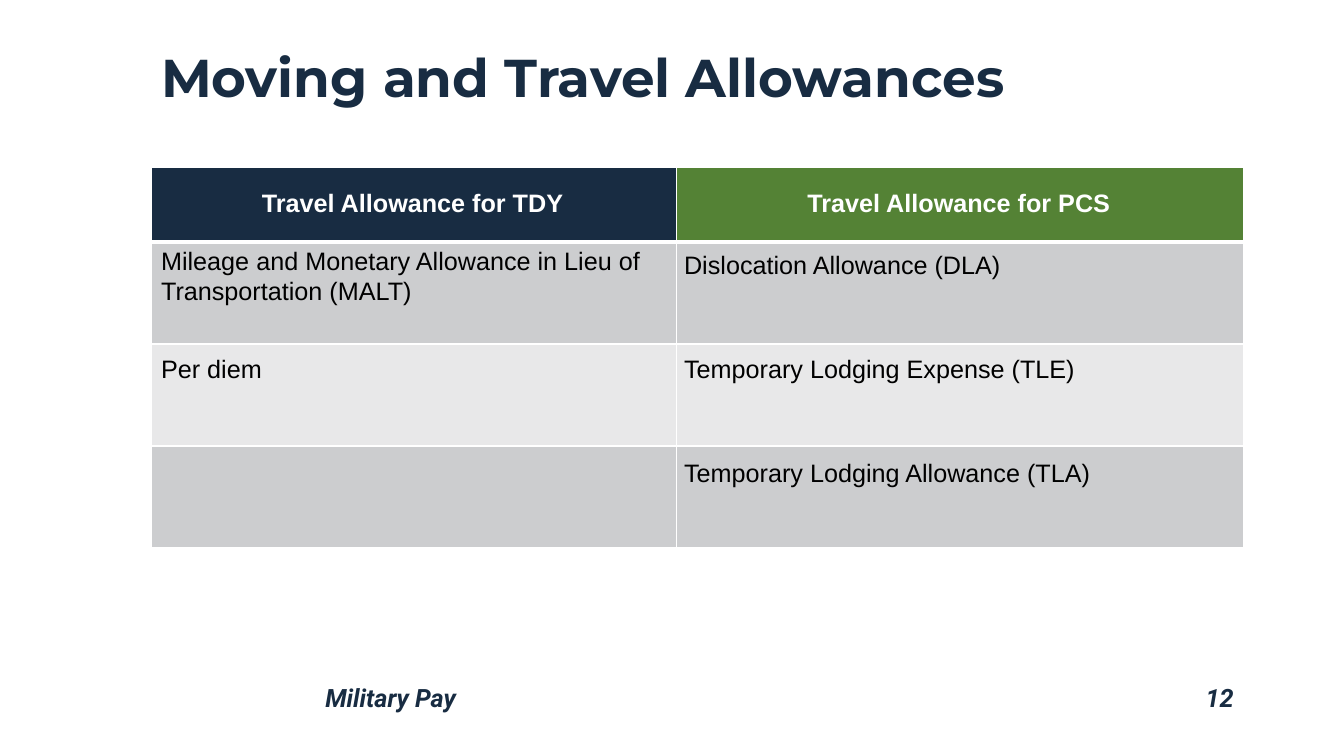
"""Build the slide on moving and travel allowances."""
from dataclasses import dataclass

from lxml import etree
from pptx import Presentation
from pptx.dml.color import RGBColor
from pptx.enum.text import MSO_ANCHOR as Anchor, PP_ALIGN as Align
from pptx.oxml.ns import qn
from pptx.util import Cm, Pt

NAVY, GREEN, WHITE, BLACK = "182C42", "548235", "FFFFFF", "000000"
DARK_GREY, LIGHT_GREY = "CCCDCF", "E8E8E9"
LEFT, TDY_W, PCS_X, PCS_W = 3.81, 13.18, 16.99, 14.35
COLUMN_WIDTHS = (13.23, 14.3)
ROW_HEIGHTS = (1.88, 2.57, 2.57, 2.57)
ROW_FILLS = ((NAVY, GREEN), (DARK_GREY,) * 2, (LIGHT_GREY,) * 2, (DARK_GREY,) * 2)


@dataclass
class Label:
    text: str
    x: float
    y: float
    w: float
    h: float
    color: str = BLACK
    font: str = "Arial"
    size: float = 18
    bold: bool = False
    italic: bool = False
    align: Align = Align.LEFT
    anchor: Anchor = Anchor.TOP
    spacing: float = 1.0


LABELS = (
    Label("12", 27.33, 17.15, 4.01, 0.97, NAVY, "Roboto", bold=True, italic=True,
          align=Align.RIGHT, spacing=0.9),
    Label("Moving and Travel Allowances", LEFT, 0.28, 27.53, 2.59, NAVY, "Montserrat",
          38, bold=True, anchor=Anchor.BOTTOM, spacing=0.9),
    Label("Military Pay", 7.95, 17.15, 19.38, 0.97, NAVY, "Roboto", bold=True,
          italic=True, spacing=0.9),
    Label("Travel Allowance for TDY", LEFT, 4.67, TDY_W, 0.99, WHITE, bold=True,
          align=Align.CENTER, spacing=0.9),
    Label("Mileage and Monetary Allowance in Lieu of Transportation (MALT)",
          LEFT, 6.05, TDY_W, 2.82),
    Label("Per diem", LEFT, 8.79, TDY_W, 2.82),
    Label("Travel Allowance for PCS", PCS_X, 4.6, PCS_W, 0.99, WHITE, bold=True,
          align=Align.CENTER),
    Label("Dislocation Allowance (DLA)", PCS_X, 6.17, PCS_W, 2.41),
    Label("Temporary Lodging Expense (TLE)", PCS_X, 8.79, PCS_W, 1.8),
    Label("Temporary Lodging Allowance (TLA)", PCS_X, 11.4, PCS_W, 1.14),
)


def rgb(color: str) -> RGBColor:
    """Turn a hex string into a colour."""
    return RGBColor.from_string(color)


def add_border(cell, side: str, width: float) -> None:
    """Draw one white edge of a table cell."""
    ln = etree.SubElement(cell._tc.get_or_add_tcPr(), qn(f"a:ln{side}"), w=str(Pt(width)))
    fill = etree.SubElement(ln, qn("a:solidFill"))
    etree.SubElement(fill, qn("a:srgbClr"), val=WHITE)


def add_grid(s) -> None:
    """Add the table with its fills and borders."""
    table = s.shapes.add_table(
        len(ROW_HEIGHTS), len(COLUMN_WIDTHS), Cm(LEFT), Cm(4.22),
        Cm(sum(COLUMN_WIDTHS)), Cm(sum(ROW_HEIGHTS))).table
    for column, width in zip(table.columns, COLUMN_WIDTHS):
        column.width = Cm(width)
    for i, (row, height, fills) in enumerate(zip(table.rows, ROW_HEIGHTS, ROW_FILLS)):
        row.height = Cm(height)
        for cell, color in zip(row.cells, fills):
            for side in "LRTB":
                below_header = (i, side) in ((0, "B"), (1, "T"))
                add_border(cell, side, 3 if below_header else 1)
            cell.fill.solid()
            cell.fill.fore_color.rgb = rgb(color)


def add_label(s, label: Label) -> None:
    """Add one text box."""
    sp = s.shapes.add_textbox(Cm(label.x), Cm(label.y), Cm(label.w), Cm(label.h))
    tf = sp.text_frame
    tf.word_wrap = True
    tf.vertical_anchor = label.anchor
    p = tf.paragraphs[0]
    p.text = label.text
    p.alignment = label.align
    p.line_spacing = label.spacing
    p.font.name = label.font
    p.font.size = Pt(label.size)
    p.font.bold = label.bold
    p.font.italic = label.italic
    p.font.color.rgb = rgb(label.color)


def main() -> None:
    """Create and save the presentation."""
    prs = Presentation()
    prs.slide_width, prs.slide_height = Cm(33.87), Cm(19.05)
    s = prs.slides.add_slide(prs.slide_layouts[6])
    add_grid(s)
    for label in LABELS:
        add_label(s, label)
    prs.save("out.pptx")


if __name__ == "__main__":
    main()
